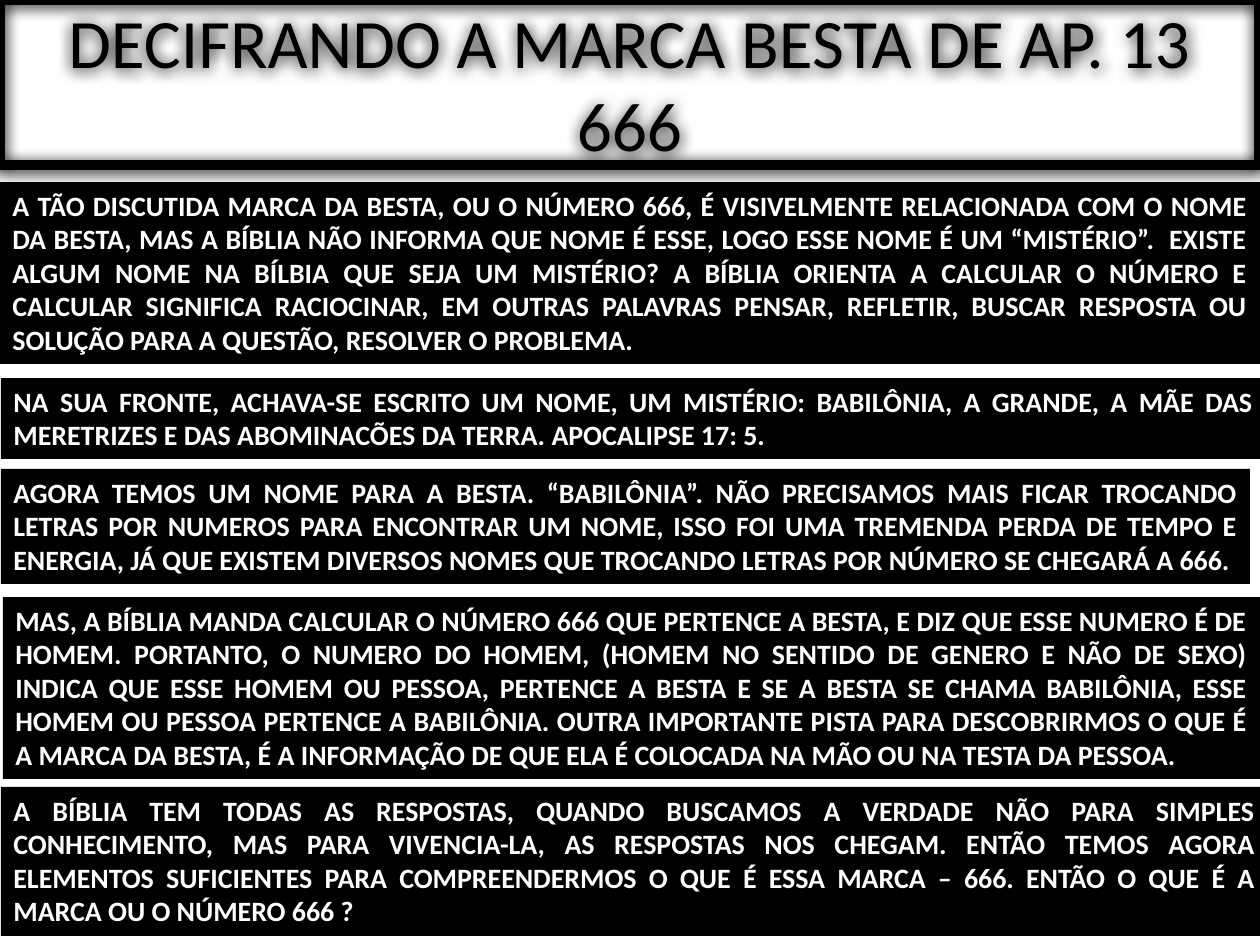
from lxml.etree import SubElement
from pptx import Presentation
from pptx.dml.color import RGBColor
from pptx.enum.text import MSO_ANCHOR, MSO_AUTO_SIZE, PP_ALIGN
from pptx.oxml.ns import qn
from pptx.util import Emu, Pt

HUES = {"ink": "000000", "paper": "FFFFFF"}
FONT = "Calibri"


def px(n):
    return Emu(round(n * 914400 / 126))


def hue(name):
    return RGBColor.from_string(HUES[name])


deck = Presentation()
deck.slide_width, deck.slide_height = px(1260), px(945)
slide = deck.slides.add_slide(deck.slide_layouts[5])

# Title in a thick frame
title = slide.shapes.title
title.left, title.top, title.width, title.height = px(0), px(0), px(1259), px(165)
title.line.color.rgb = hue("ink")
title.line.width = Pt(6)
frame = title.text_frame
frame.text = "DECIFRANDO A MARCA BESTA DE AP. 13 666"
frame.word_wrap = True
frame.auto_size = MSO_AUTO_SIZE.NONE
frame.vertical_anchor = MSO_ANCHOR.MIDDLE
para = frame.paragraphs[0]
para.alignment = PP_ALIGN.CENTER
para.font.name, para.font.size = FONT, Pt(39.6)
para.font.color.rgb = hue("ink")

# Soft shadow below the frame and its text
effects = SubElement(title._element.spPr, qn("a:effectLst"))
shadow = SubElement(effects, qn("a:outerShdw"), blurRad=str(Pt(8.5)),
                    dist=str(Pt(1)), dir="5400000", rotWithShape="0")
SubElement(shadow, qn("a:srgbClr"), val=HUES["ink"])

# Black text bands: left, top, width, height, text
bands = [
    (0, 182, 1260, 182,
     "A TÃO DISCUTIDA MARCA DA BESTA, OU O NÚMERO 666, É VISIVELMENTE "
     "RELACIONADA COM O NOME DA BESTA, MAS A BÍBLIA NÃO INFORMA QUE NOME É "
     "ESSE, LOGO ESSE NOME É UM “MISTÉRIO”.  EXISTE ALGUM NOME NA BÍLBIA QUE "
     "SEJA UM MISTÉRIO? A BÍBLIA ORIENTA A CALCULAR O NÚMERO E CALCULAR "
     "SIGNIFICA RACIOCINAR, EM OUTRAS PALAVRAS PENSAR, REFLETIR, BUSCAR "
     "RESPOSTA OU SOLUÇÃO PARA A QUESTÃO, RESOLVER O PROBLEMA."),
    (1, 378, 1265, 81,
     "NA SUA FRONTE, ACHAVA-SE ESCRITO UM NOME, UM MISTÉRIO: BABILÔNIA, A "
     "GRANDE, A MÃE DAS MERETRIZES E DAS ABOMINACÕES DA TERRA. "
     "APOCALIPSE 17: 5."),
    (1, 469, 1249, 115,
     "AGORA TEMOS UM NOME PARA A BESTA. “BABILÔNIA”. NÃO PRECISAMOS MAIS "
     "FICAR TROCANDO LETRAS POR NUMEROS PARA ENCONTRAR UM NOME, ISSO FOI UMA "
     "TREMENDA PERDA DE TEMPO E ENERGIA, JÁ QUE EXISTEM DIVERSOS NOMES QUE "
     "TROCANDO LETRAS POR NÚMERO SE CHEGARÁ A 666."),
    (3, 597, 1257, 182,
     "MAS, A BÍBLIA MANDA CALCULAR O NÚMERO 666 QUE PERTENCE A BESTA, E DIZ "
     "QUE ESSE NUMERO É DE HOMEM. PORTANTO, O NUMERO DO HOMEM, (HOMEM NO "
     "SENTIDO DE GENERO E NÃO DE SEXO) INDICA QUE ESSE HOMEM OU PESSOA, "
     "PERTENCE A BESTA E SE A BESTA SE CHAMA BABILÔNIA, ESSE HOMEM OU PESSOA "
     "PERTENCE A BABILÔNIA. OUTRA IMPORTANTE PISTA PARA DESCOBRIRMOS O QUE É "
     "A MARCA DA BESTA, É A INFORMAÇÃO DE QUE ELA É COLOCADA NA MÃO OU NA "
     "TESTA DA PESSOA."),
    (1, 787, 1267, 149,
     "A BÍBLIA TEM TODAS AS RESPOSTAS, QUANDO BUSCAMOS A VERDADE NÃO PARA "
     "SIMPLES CONHECIMENTO, MAS PARA VIVENCIA-LA, AS RESPOSTAS NOS CHEGAM. "
     "ENTÃO TEMOS AGORA ELEMENTOS SUFICIENTES PARA COMPREENDERMOS O QUE É "
     "ESSA MARCA – 666. ENTÃO O QUE É A MARCA OU O NÚMERO 666 ?"),
]
for left, top, width, height, text in bands:
    band = slide.shapes.add_textbox(px(left), px(top), px(width), px(height))
    band.fill.solid()
    band.fill.fore_color.rgb = hue("ink")
    frame = band.text_frame
    frame.text = text
    frame.word_wrap = True
    frame.auto_size = MSO_AUTO_SIZE.SHAPE_TO_FIT_TEXT
    para = frame.paragraphs[0]
    para.alignment = PP_ALIGN.JUSTIFY
    para.font.name, para.font.size, para.font.bold = FONT, Pt(16), True
    para.font.color.rgb = hue("paper")

deck.save("out.pptx")
